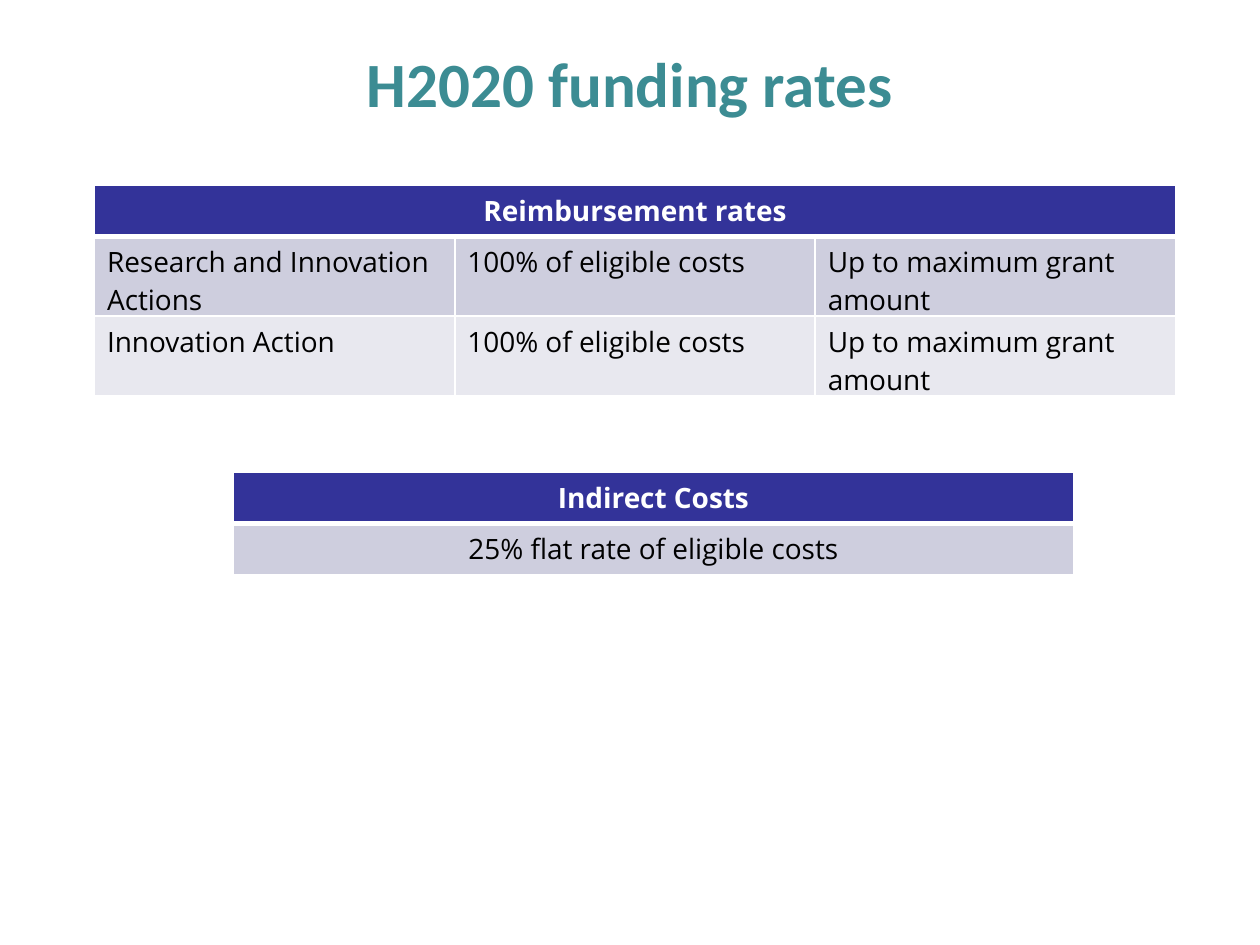
"""Build the H2020 funding rates slide."""
from lxml.etree import fromstring
from pptx import Presentation
from pptx.dml.color import RGBColor as RGB
from pptx.enum.text import MSO_ANCHOR as Anchor, PP_ALIGN as Align
from pptx.oxml.ns import nsdecls
from pptx.util import Pt

WHITE = RGB(0xFF, 0xFF, 0xFF)
BLACK = RGB(0, 0, 0)
TEAL = RGB(0x3C, 0x8C, 0x93)
NAVY = RGB(0x33, 0x33, 0x99)
BANDS = RGB(0xCE, 0xCE, 0xDE), RGB(0xE8, 0xE8, 0xEF)
ROW = 29.2


def write(frame, text, face, size, color, bold, align):
    frame.text = text
    para = frame.paragraphs[0]
    para.alignment = align
    font = para.font
    font.name, font.size, font.bold = face, Pt(size), bold
    font.color.rgb = color


def edge(cell, top, base):
    props = cell._tc.get_or_add_tcPr()
    sides = {"L": 1, "R": 1, "T": top, "B": base}
    for spot, (side, width) in enumerate(sides.items()):
        props.insert(spot, fromstring(
            f'<a:ln{side} {nsdecls("a")} w="{Pt(width)}"><a:solidFill>'
            f'<a:srgbClr val="{WHITE}"/></a:solidFill></a:ln{side}>'))


def add_title(slide, text):
    box = slide.shapes.add_textbox(0, Pt(2), Pt(720), Pt(90))
    frame = box.text_frame
    frame.word_wrap = True
    frame.vertical_anchor = Anchor.MIDDLE
    write(frame, text, "Calibri", 36, TEAL, True, Align.CENTER)


def add_grid(slide, left, top, width, head, body, align):
    count = len(body[0])
    rows = [[head] + [""] * (count - 1)] + body
    grid = slide.shapes.add_table(len(rows), count, Pt(left), Pt(top),
                                  Pt(width), Pt(ROW * len(rows))).table
    for r, row in enumerate(rows):
        for c, text in enumerate(row):
            cell = grid.cell(r, c)
            cell.fill.solid()
            cell.fill.fore_color.rgb = BANDS[(r - 1) % 2] if r else NAVY
            edge(cell, 3 if r == 1 else 1, 1 if r else 3)
            if text:
                write(cell.text_frame, text, "Open Sans", 16,
                      BLACK if r else WHITE, r == 0,
                      align if r else Align.CENTER)
    if count > 1:
        grid.cell(0, 0).merge(grid.cell(0, count - 1))


def main():
    deck = Presentation()
    deck.slide_width, deck.slide_height = Pt(720), Pt(540)
    slide = deck.slides.add_slide(deck.slide_layouts[6])
    add_title(slide, "H2020 funding rates")
    terms = ["100% of eligible costs", "Up to maximum grant amount"]
    add_grid(slide, 54, 105.8, 617.8, "Reimbursement rates",
             [["Research and Innovation Actions"] + terms,
              ["Innovation Action"] + terms], Align.LEFT)
    add_grid(slide, 133.4, 270, 480, "Indirect Costs",
             [["25% flat rate of eligible costs"]], Align.CENTER)
    deck.save("out.pptx")


if __name__ == "__main__":
    main()
